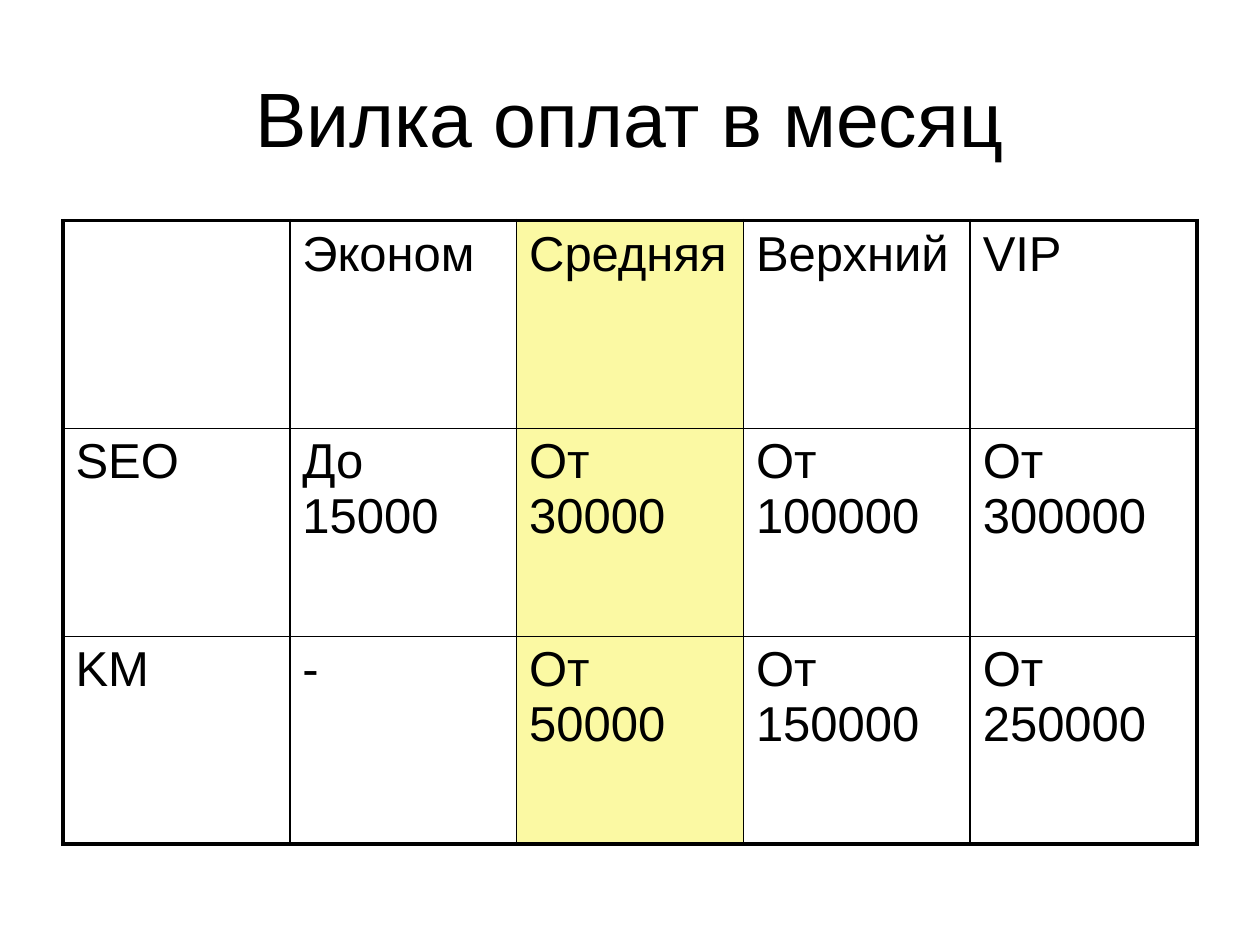
from lxml.etree import SubElement
from pptx import Presentation
from pptx.dml.color import RGBColor
from pptx.enum.text import MSO_ANCHOR, PP_ALIGN
from pptx.oxml.ns import qn
from pptx.util import Inches, Pt

TITLE = "Вилка оплат в месяц"
PRICES = [
    ["", "Эконом", "Средняя", "Верхний", "VIP"],
    ["SEO", "До 15000", "От 30000", "От 100000", "От 300000"],
    ["KM", "-", "От 50000", "От 150000", "От 250000"],
]
HIGHLIGHTED_COLUMN = 2
COLORS = {"ink": "000000", "highlight": "FBF9A3"}
FONT = "Arial"
OUTER_LINE, INNER_LINE = Pt(2.25), Pt(1)
COLUMN_WIDTH, ROW_HEIGHT = 1.8, 1.65


def style_text(paragraph, size):
    for run in paragraph.runs:
        run.font.name = FONT
        run.font.size = Pt(size)
        run.font.color.rgb = RGBColor.from_string(COLORS["ink"])


def set_borders(cell, widths):
    """Add left, right, top and bottom lines ahead of the cell's fill."""
    properties = cell._tc.get_or_add_tcPr()
    for position, (side, width) in enumerate(widths.items()):
        line = SubElement(properties, qn(f"a:ln{side}"), w=str(width))
        fill = SubElement(line, qn("a:solidFill"))
        SubElement(fill, qn("a:srgbClr"), val=COLORS["ink"])
        properties.insert(position, line)


prs = Presentation()
prs.slide_width, prs.slide_height = Inches(10), Inches(7.5)
slide = prs.slides.add_slide(prs.slide_layouts[6])

# Title
heading = slide.shapes.add_textbox(Inches(0.5), Inches(0.3), Inches(9), Inches(1.25))
frame = heading.text_frame
frame.word_wrap = True
frame.vertical_anchor = MSO_ANCHOR.MIDDLE
frame.text = TITLE
frame.paragraphs[0].alignment = PP_ALIGN.CENTER
style_text(frame.paragraphs[0], 44)

# Price table
row_count, column_count = len(PRICES), len(PRICES[0])
price_table = slide.shapes.add_table(
    row_count, column_count, Inches(0.5), Inches(1.75),
    Inches(COLUMN_WIDTH * column_count), Inches(ROW_HEIGHT * row_count),
).table
price_table.first_row = price_table.horz_banding = False
for column in price_table.columns:
    column.width = Inches(COLUMN_WIDTH)
for row in price_table.rows:
    row.height = Inches(ROW_HEIGHT)

for r, prices in enumerate(PRICES):
    for c, price in enumerate(prices):
        cell = price_table.cell(r, c)
        cell.text = price
        style_text(cell.text_frame.paragraphs[0], 28)
        if c == HIGHLIGHTED_COLUMN:
            cell.fill.solid()
            cell.fill.fore_color.rgb = RGBColor.from_string(COLORS["highlight"])
        else:
            cell.fill.background()
        # The table's outline is thicker than its inner grid
        on_outline = {"L": c == 0, "R": c == column_count - 1,
                      "T": r == 0, "B": r == row_count - 1}
        set_borders(cell, {side: OUTER_LINE if outer else INNER_LINE
                           for side, outer in on_outline.items()})

prs.save("out.pptx")
